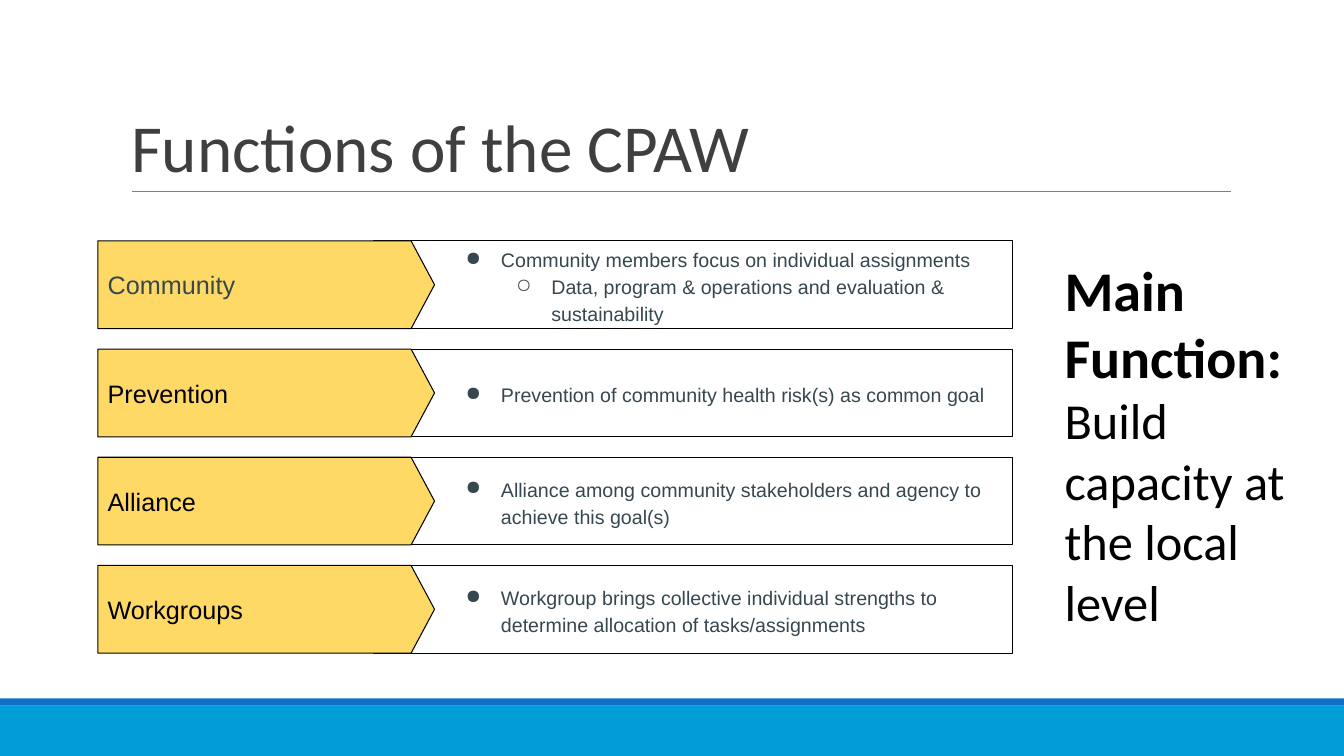
"""Build the slide on the functions of the CPAW."""
from lxml import etree
from pptx import Presentation
from pptx import util as u
from pptx.dml.color import RGBColor
from pptx.enum import shapes, text
from pptx.oxml import ns

BLUE = RGBColor(0x00, 0x9D, 0xD9)
DARK_BLUE = RGBColor(0x0F, 0x6F, 0xC6)
GRAY = RGBColor(0x7F, 0x7F, 0x7F)
TITLE_GRAY = RGBColor(0x3F, 0x3F, 0x3F)
SLATE = RGBColor(0x37, 0x47, 0x4F)
YELLOW = RGBColor(0xFF, 0xD9, 0x66)
WHITE = RGBColor(0xFF, 0xFF, 0xFF)
BLACK = RGBColor(0x00, 0x00, 0x00)

FIRST_TOP, LAST_TOP, ROW_HEIGHT = 2.39, 5.61, 0.87
BULLETS = "●○"
FUNCTIONS = [
    ("Community", SLATE, [
        ("Community members focus on individual assignments", 0),
        ("Data, program & operations and evaluation & sustainability", 1)]),
    ("Prevention", BLACK, [
        ("Prevention of community health risk(s) as common goal", 0)]),
    ("Alliance", BLACK, [
        ("Alliance among community stakeholders and agency to achieve this goal(s)", 0)]),
    ("Workgroups", BLACK, [
        ("Workgroup brings collective individual strengths to "
         "determine allocation of tasks/assignments", 0)]),
]


def add_block(parent, kind, box, fill, line=None):
    """Add a filled preset shape, outlined if a line colour is given."""
    shape = parent.shapes.add_shape(kind, *map(u.Inches, box))
    shape.shadow.inherit = False
    shape.fill.solid()
    shape.fill.fore_color.rgb = fill
    if line is None:
        shape.line.fill.background()
    else:
        shape.line.color.rgb = line
        shape.line.width = u.Pt(0.75)
    return shape


def add_rule(slide, left, right, top):
    """Add the thin horizontal line under the title."""
    rule = slide.shapes.add_connector(
        shapes.MSO_CONNECTOR.STRAIGHT, *map(u.Inches, (left, top, right, top)))
    rule.line.color.rgb = GRAY
    rule.line.width = u.Pt(0.75)
    etree.SubElement(rule._element.spPr, ns.qn("a:effectLst"))


def set_frame(frame, anchor, vertical_inset=0.1):
    """Set wrapping, anchor and insets of a text frame."""
    frame.word_wrap = True
    frame.auto_size = text.MSO_AUTO_SIZE.NONE
    frame.vertical_anchor = anchor
    frame.margin_left = frame.margin_right = u.Inches(0.1)
    frame.margin_top = frame.margin_bottom = u.Inches(vertical_inset)


def style_runs(paragraph, name, size, color):
    """Left-align a paragraph and format its runs."""
    paragraph.alignment = text.PP_ALIGN.LEFT
    for run in paragraph.runs:
        run.font.name = name
        run.font.size = u.Pt(size)
        run.font.color.rgb = color


def add_text_box(slide, box, anchor):
    """Add a wrapping text box and return its text frame."""
    frame = slide.shapes.add_textbox(*map(u.Inches, box)).text_frame
    set_frame(frame, anchor)
    return frame


def set_bullet(paragraph, level):
    """Give a paragraph the bullet and hanging indent of its level."""
    paragraph.level = level
    properties = paragraph._p.get_or_add_pPr()
    properties.set("marL", str(u.Inches(0.5 * (level + 1))))
    properties.set("indent", str(u.Inches(-0.35)))
    color = etree.SubElement(properties, ns.qn("a:buClr"))
    etree.SubElement(color, ns.qn("a:srgbClr"), val=str(SLATE))
    etree.SubElement(properties, ns.qn("a:buChar"), char=BULLETS[level])


def set_title(slide):
    """Place and format the title placeholder."""
    title = slide.shapes.title
    title.left, title.top, title.width, title.height = map(
        u.Inches, (1.2, 0.31, 11, 1.59))
    frame = title.text_frame
    frame.text = "Functions of the CPAW"
    set_frame(frame, text.MSO_ANCHOR.BOTTOM, 0.05)
    frame.paragraphs[0].line_spacing = 0.85
    style_runs(frame.paragraphs[0], "Calibri", 48, TITLE_GRAY)


def add_function_row(slide, top, label, label_color, items):
    """Add one labelled arrow with its outlined bullet list."""
    group = slide.shapes.add_group_shape()
    add_block(group, shapes.MSO_SHAPE.RECTANGLE,
              (3.71, top, 6.33, ROW_HEIGHT), WHITE, BLACK)
    arrow = add_block(group, shapes.MSO_SHAPE.PENTAGON,
                      (0.97, top, 3.34, ROW_HEIGHT), YELLOW, BLACK)
    arrow.adjustments[0] = 0.267
    arrow.text_frame.text = label
    set_frame(arrow.text_frame, text.MSO_ANCHOR.MIDDLE)
    style_runs(arrow.text_frame.paragraphs[0], "Arial", 18, label_color)

    frame = add_text_box(slide, (4.37, top, 5.59, ROW_HEIGHT), text.MSO_ANCHOR.MIDDLE)
    frame.text = "\n".join(item for item, level in items)
    for paragraph, (item, level) in zip(frame.paragraphs, items):
        paragraph.line_spacing = 1.15
        style_runs(paragraph, "Arial", 14, SLATE)
        set_bullet(paragraph, level)


def add_main_function(slide):
    """Add the main function statement on the right."""
    frame = add_text_box(slide, (10.46, 2.43, 2.48, 4.05), text.MSO_ANCHOR.TOP)
    paragraph = frame.paragraphs[0]
    paragraph.text = "Main Function: "
    style_runs(paragraph, "Calibri", 40, BLACK)
    paragraph.runs[0].font.bold = True
    statement = paragraph.add_run()
    statement.text = "Build capacity at the local level"
    statement.font.name = "Calibri"
    statement.font.size = u.Pt(36)
    statement.font.color.rgb = BLACK


def main():
    """Build and save the presentation."""
    presentation = Presentation()
    presentation.slide_width = u.Inches(13.33)
    presentation.slide_height = u.Inches(7.5)
    slide = presentation.slides.add_slide(presentation.slide_layouts[5])
    add_block(slide, shapes.MSO_SHAPE.RECTANGLE, (0, 7, 13.33, 0.5), BLUE)
    add_block(slide, shapes.MSO_SHAPE.RECTANGLE, (0, 6.93, 13.33, 0.07), DARK_BLUE)
    add_rule(slide, 1.31, 12.21, 1.9)
    set_title(slide)
    pitch = (LAST_TOP - FIRST_TOP) / (len(FUNCTIONS) - 1)
    for index, (label, color, items) in enumerate(FUNCTIONS):
        add_function_row(slide, FIRST_TOP + index * pitch, label, color, items)
    add_main_function(slide)
    presentation.save("out.pptx")


if __name__ == "__main__":
    main()
